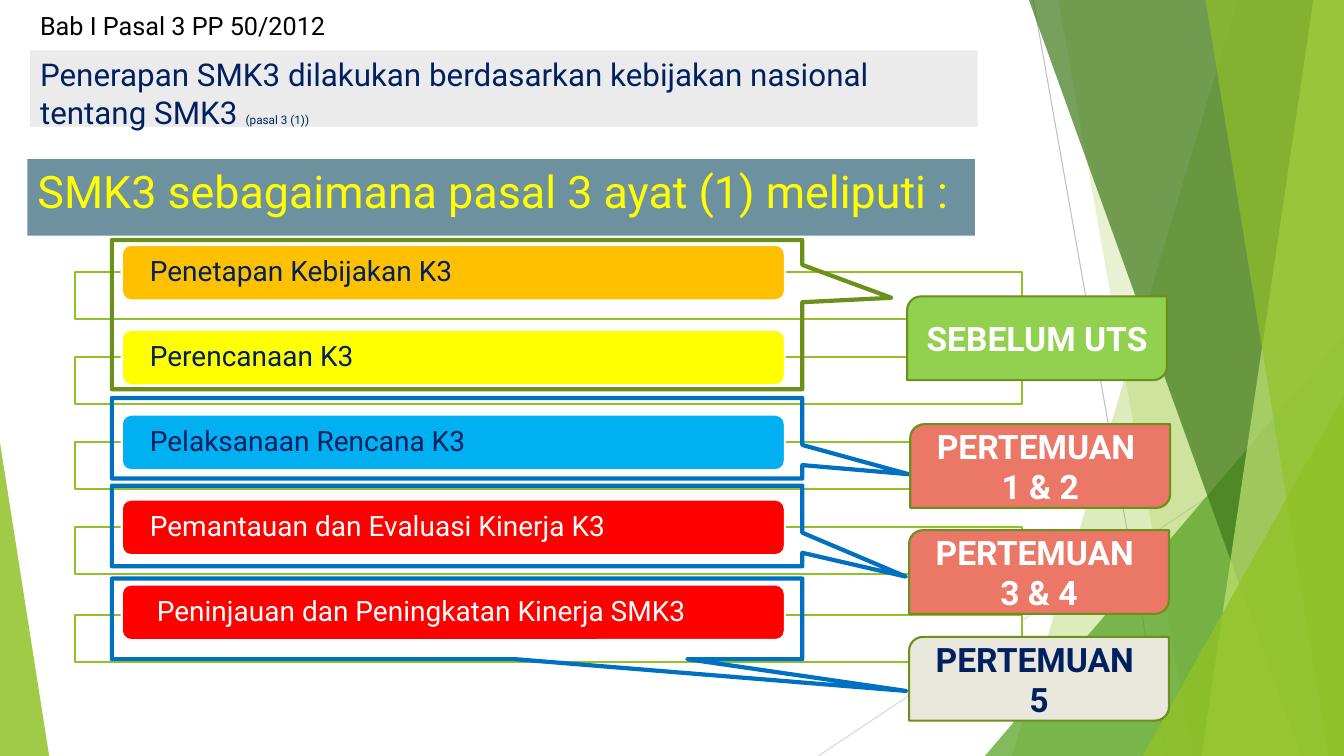
from dataclasses import dataclass

from lxml import etree
from pptx import Presentation
from pptx.dml.color import RGBColor
from pptx.enum import shapes, text
from pptx.oxml import ns
from pptx.util import Cm, Pt

WIDTH, HEIGHT = 33.87, 19.05
FONT = "Roboto"
GREEN, OLIVE, BLUE = "90C226", "6B901C", "0070C0"
NAVY, WHITE = "002060", "FFFFFF"
SHAPE = shapes.MSO_SHAPE


@dataclass
class Facet:
    """Translucent panel from the top edge to the bottom edge, open to the right."""
    top_left: float
    bottom_left: float
    color: str
    opacity: int


@dataclass
class Corner:
    """Translucent right triangle standing on the bottom edge."""
    left: float
    width: float
    height: float
    apex: float
    color: str
    opacity: int


@dataclass
class Principle:
    label: str
    color: str
    ink: str = NAVY
    frame_drop: float = 0


@dataclass
class Meeting:
    lines: list[str]
    tag_left: float
    tag_top: float
    color: str
    callout_top: float
    callout_height: float
    tip: tuple[float, float]
    ink: str = WHITE
    callout_line: str = BLUE


BACKDROP = [
    Facet(31.19, 25.5, GREEN, 30),
    Facet(26.67, 30.05, GREEN, 20),
    Corner(24.82, 9.05, 10.59, 1, "54A021", 72),
    Facet(25.93, 32.79, "3F7819", 70),
    Facet(33.1, 30.28, "C0E474", 70),
    Facet(30.38, 33.48, GREEN, 65),
    Corner(28.8, 5.07, 9.07, 1, GREEN, 80),
    Corner(0, 1.24, 7.9, 0, GREEN, 85),
]
RAYS = [((26.04, 0), (29.41, HEIGHT), "BFBFBF"),
        ((WIDTH, 10.24), (20.62, HEIGHT), "D9D9D9")]
PRINCIPLES = [
    Principle("Penetapan Kebijakan K3", "FFC000"),
    Principle("Perencanaan K3", "FFFF00"),
    Principle("Pelaksanaan Rencana K3", "00B0F0"),
    Principle("Pemantauan dan Evaluasi Kinerja K3", "FF0000", WHITE),
    Principle(" Peninjauan dan Peningkatan Kinerja SMK3", "FF0000", WHITE, 0.07),
]
MEETINGS = [
    Meeting(["SEBELUM UTS"], 22.86, 7.47, "92D050", 6.05, 3.76,
            (0.629, -0.113), callout_line=OLIVE),
    Meeting(["PERTEMUAN ", "1 & 2"], 22.94, 10.69, "EB7766", 10.03, 2.03, (0.654, 0.446)),
    Meeting(["PERTEMUAN ", "3 & 4"], 22.91, 13.36, "EB7766", 12.24, 2.03, (0.65, 0.629)),
    Meeting(["PERTEMUAN ", "5"], 22.91, 16.05, "EAE8DC", 14.58, 2.03, (0.65, 0.895), NAVY),
]


def rgb(color: str) -> RGBColor:
    return RGBColor.from_string(color)


def paint(shape, fill: str | None = None, line: str | None = None,
          weight: float = 1.5, opacity: int = 100) -> None:
    shape.shadow.inherit = False
    if fill:
        shape.fill.solid()
        shape.fill.fore_color.rgb = rgb(fill)
        if opacity < 100:
            color = shape.fill._xPr.find(".//" + ns.qn("a:srgbClr"))
            etree.SubElement(color, ns.qn("a:alpha"), val=str(opacity * 1000))
    else:
        shape.fill.background()
    if line:
        shape.line.color.rgb = rgb(line)
        shape.line.width = Pt(weight)
    else:
        shape.line.fill.background()


def add_preset(slide, kind, left: float, top: float, width: float, height: float, **look):
    shape = slide.shapes.add_shape(kind, Cm(left), Cm(top), Cm(width), Cm(height))
    paint(shape, **look)
    return shape


def add_run(paragraph, words: str, size: float, ink: str, bold: bool = False) -> None:
    run = paragraph.add_run()
    run.text = words
    run.font.name, run.font.size, run.font.bold = FONT, Pt(size), bold
    run.font.color.rgb = rgb(ink)


def write(shape, *lines: str, size: float, ink: str, bold: bool = False,
          align=text.PP_ALIGN.LEFT, anchor=text.MSO_ANCHOR.TOP, spacing: float = 1.0):
    """Fill the shape with one paragraph per line and return the last one."""
    frame = shape.text_frame
    frame.word_wrap = True
    frame.auto_size = text.MSO_AUTO_SIZE.NONE
    frame.vertical_anchor = anchor
    for index, line in enumerate(lines):
        paragraph = frame.add_paragraph() if index else frame.paragraphs[0]
        paragraph.alignment, paragraph.line_spacing = align, spacing
        add_run(paragraph, line, size, ink, bold)
    return paragraph


def draw_backdrop(slide) -> None:
    for start, end, color in RAYS:
        ray = slide.shapes.add_connector(
            shapes.MSO_CONNECTOR.STRAIGHT, *(Cm(v) for v in start + end))
        ray.line.color.rgb = rgb(color)
        ray.line.width = Pt(0.75)
        etree.SubElement(ray._element.spPr, ns.qn("a:effectLst"))
    for part in BACKDROP:
        if isinstance(part, Facet):
            outline = slide.shapes.build_freeform(Cm(part.top_left), 0)
            corners = [(WIDTH, 0), (WIDTH, HEIGHT), (part.bottom_left, HEIGHT)]
            outline.add_line_segments([(Cm(x), Cm(y)) for x, y in corners])
            paint(outline.convert_to_shape(), fill=part.color, opacity=part.opacity)
        else:
            corner = add_preset(slide, SHAPE.ISOSCELES_TRIANGLE, part.left,
                                HEIGHT - part.height, part.width, part.height,
                                fill=part.color, opacity=part.opacity)
            corner.adjustments[0] = part.apex


def draw_principle(slide, principle: Principle, row: int) -> None:
    offset = 2.14 * row
    add_preset(slide, SHAPE.RECTANGLE, 1.88, 6.86 + offset + principle.frame_drop,
               23.88, 1.19, fill=WHITE, line=GREEN, opacity=90)
    bar = add_preset(slide, SHAPE.ROUNDED_RECTANGLE, 3.07, 6.17 + offset, 16.71, 1.4,
                     fill=principle.color, line=WHITE)
    write(bar, principle.label, size=20, ink=principle.ink,
          anchor=text.MSO_ANCHOR.MIDDLE, spacing=0.9)
    bar.text_frame.margin_left = bar.text_frame.margin_right = Cm(0.64)
    bar.text_frame.margin_top = bar.text_frame.margin_bottom = 0


def draw_meeting(slide, meeting: Meeting) -> None:
    callout = add_preset(slide, SHAPE.RECTANGULAR_CALLOUT, 2.82, meeting.callout_top,
                         17.4, meeting.callout_height, line=meeting.callout_line, weight=3)
    callout.adjustments[0], callout.adjustments[1] = meeting.tip
    tag = add_preset(slide, SHAPE.ROUND_2_DIAG_RECTANGLE, meeting.tag_left,
                     meeting.tag_top, 6.55, 2.11, fill=meeting.color, line=OLIVE)
    write(tag, *meeting.lines, size=24, ink=meeting.ink, bold=True,
          align=text.PP_ALIGN.CENTER, anchor=text.MSO_ANCHOR.MIDDLE)


def main() -> None:
    deck = Presentation()
    deck.slide_width, deck.slide_height = Cm(WIDTH), Cm(HEIGHT)
    slide = deck.slides.add_slide(deck.slide_layouts[5])
    draw_backdrop(slide)

    title = slide.shapes.title
    title.left, title.top, title.width, title.height = Cm(0.69), Cm(4.01), Cm(23.88), Cm(1.93)
    title.fill.solid()
    title.fill.fore_color.rgb = rgb("6E91A0")
    write(title, "SMK3 sebagaimana pasal 3 ayat (1) meliputi :", size=32, ink="FFFF00")

    for row, principle in enumerate(PRINCIPLES):
        draw_principle(slide, principle, row)

    policy = add_preset(slide, SHAPE.RECTANGLE, 0.76, 1.27, 23.88, 1.93, fill="EBEBEB")
    statement = write(
        policy, "Penerapan SMK3 dilakukan berdasarkan kebijakan nasional tentang SMK3 ",
        size=22.4, ink=NAVY)
    add_run(statement, "(pasal 3 (1))", 8.4, NAVY)

    chapter = slide.shapes.add_textbox(Cm(0.76), Cm(0.13), Cm(15.65), Cm(1.02))
    write(chapter, "Bab I Pasal 3 PP 50/2012", size=18, ink="000000")

    for meeting in MEETINGS:
        draw_meeting(slide, meeting)
    deck.save("out.pptx")


if __name__ == "__main__":
    main()
